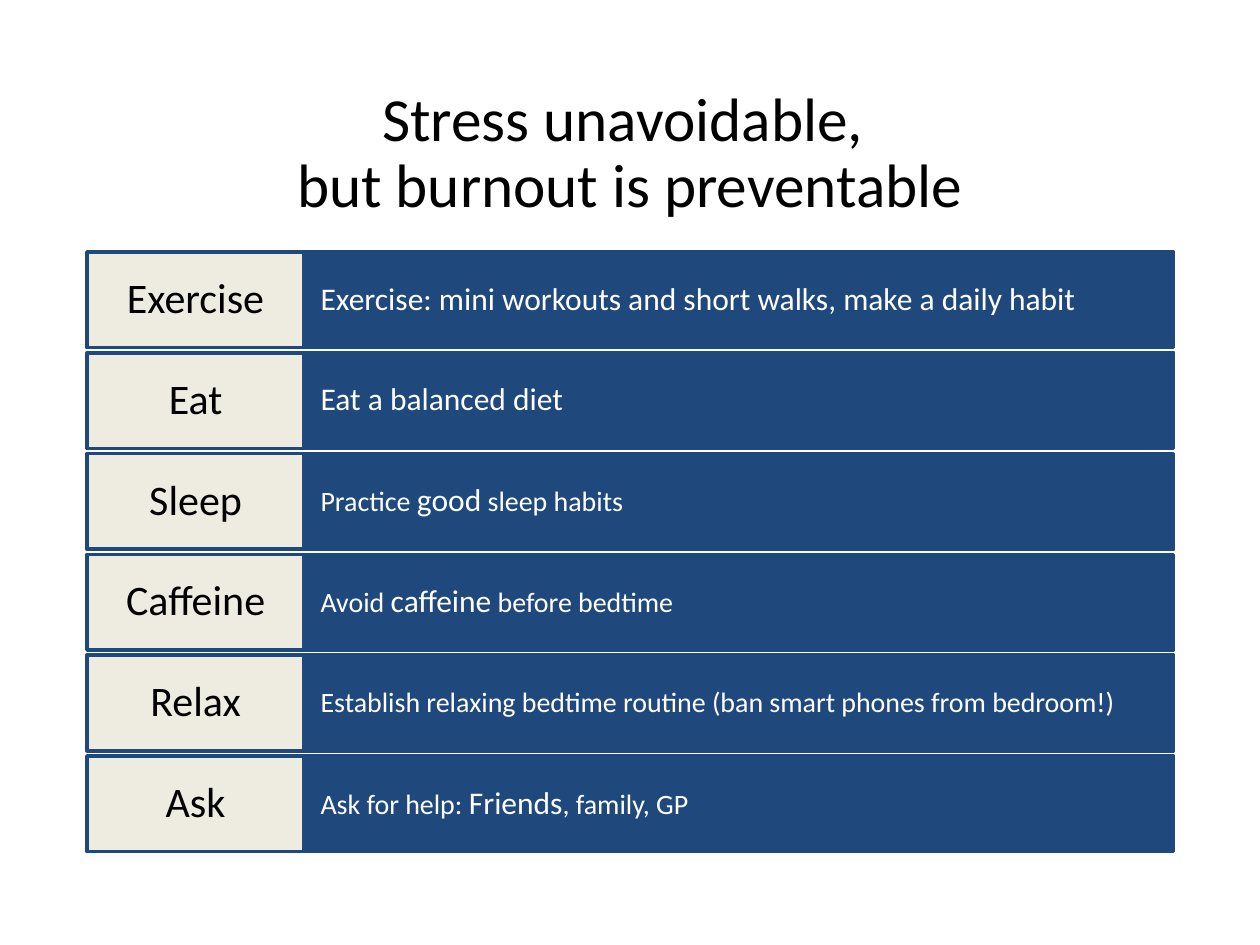
from dataclasses import dataclass

from pptx import Presentation
from pptx.dml.color import RGBColor
from pptx.enum.shapes import MSO_SHAPE
from pptx.enum.text import MSO_ANCHOR, PP_ALIGN
from pptx.util import Inches, Pt


@dataclass(frozen=True)
class Theme:
    font: str = "Calibri"
    navy: RGBColor = RGBColor(0x1F, 0x49, 0x7D)
    cream: RGBColor = RGBColor(0xEE, 0xEC, 0xE1)
    black: RGBColor = RGBColor(0, 0, 0)
    white: RGBColor = RGBColor(0xFF, 0xFF, 0xFF)
    title_size: Pt = Pt(35)
    label_size: Pt = Pt(24)
    large_size: Pt = Pt(18)
    small_size: Pt = Pt(16)
    border: Pt = Pt(2)


theme = Theme()
LARGE, SMALL = theme.large_size, theme.small_size

# Each habit: label, then its advice as (text, size) parts
habits = [
    ("Exercise", [("Exercise: mini workouts and short walks, make a daily habit", LARGE)]),
    ("Eat", [("Eat a balanced diet", LARGE)]),
    ("Sleep", [("Practice ", SMALL), ("good", LARGE), (" sleep habits", SMALL)]),
    ("Caffeine", [("Avoid ", SMALL), ("caffeine", LARGE), (" before bedtime", SMALL)]),
    ("Relax", [("Establish relaxing bedtime routine (ban smart phones from bedroom!)", SMALL)]),
    ("Ask", [("Ask for help: ", SMALL), ("Friends", LARGE), (", family, GP", SMALL)]),
]

left, label_width, advice_width = 0.69, 1.725, 6.9
first_top, row_pitch, row_height = 2, 0.8, 0.76


def format_paragraph(paragraph, color, align):
    paragraph.alignment = align
    paragraph.line_spacing = 0.9
    paragraph.font.name = theme.font
    paragraph.font.color.rgb = color


def add_cell(x, y, width, fill, color, align, margins, parts):
    cell = slide.shapes.add_shape(
        MSO_SHAPE.RECTANGLE, Inches(x), Inches(y), Inches(width), Inches(row_height))
    cell.shadow.inherit = False
    cell.fill.solid()
    cell.fill.fore_color.rgb = fill
    cell.line.color.rgb = theme.navy
    cell.line.width = theme.border
    frame = cell.text_frame
    frame.word_wrap = True
    frame.vertical_anchor = MSO_ANCHOR.MIDDLE
    frame.margin_left = frame.margin_right = Inches(margins[0])
    frame.margin_top = frame.margin_bottom = Inches(margins[1])
    paragraph = frame.paragraphs[0]
    format_paragraph(paragraph, color, align)
    for text, size in parts:
        run = paragraph.add_run()
        run.text = text
        run.font.size = size


presentation = Presentation()
presentation.slide_width = Inches(10)
presentation.slide_height = Inches(7.5)
slide = presentation.slides.add_slide(presentation.slide_layouts[5])

# Title
title = slide.shapes.title
title.left, title.top = Inches(left), Inches(0.61)
title.width, title.height = Inches(8.62), Inches(1.24)
title.text_frame.text = "Stress unavoidable, \vbut burnout is preventable"
title.text_frame.vertical_anchor = MSO_ANCHOR.MIDDLE
heading = title.text_frame.paragraphs[0]
format_paragraph(heading, theme.black, PP_ALIGN.CENTER)
heading.font.size = theme.title_size

# Habit rows: advice first, so the label's border lies on top
for row, (label, advice) in enumerate(habits):
    top = first_top + row * row_pitch
    add_cell(left + label_width, top, advice_width, theme.navy, theme.white,
             PP_ALIGN.LEFT, (0.13, 0.19), advice)
    add_cell(left, top, label_width, theme.cream, theme.black,
             PP_ALIGN.CENTER, (0.09, 0.07), [(label, theme.label_size)])

presentation.save("out.pptx")
